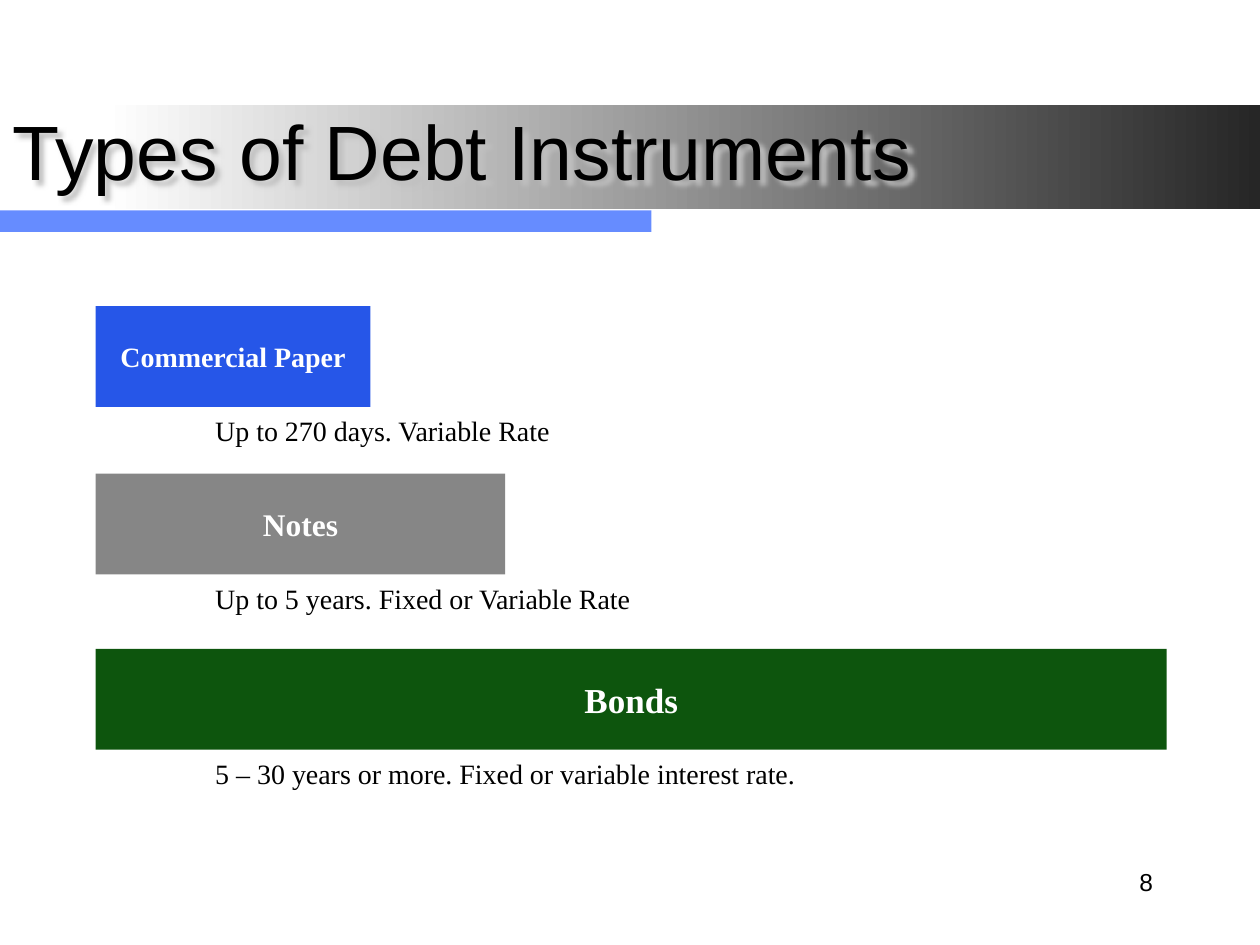
from lxml import etree
from pptx import Presentation
from pptx.dml.color import RGBColor
from pptx.enum import shapes, text
from pptx.oxml.ns import qn
from pptx.util import Inches, Pt

COLORS = {
    "black": "000000", "white": "FFFFFF", "band_end": "262626",
    "accent": "3366FF", "blue": "0039E5", "gray": "868686",
    "green": "004C00", "glow": "C0C0C0",
}
SANS, SERIF = "Arial", "Times New Roman"
LEFT, ALIGN = text.PP_ALIGN.LEFT, text.PP_ALIGN


def rgb(name):
    return RGBColor.from_string(COLORS[name])


def set_text(sp, words, size, font=SERIF, color="black", bold=False,
             align=LEFT, insets=(0.1, 0.05)):
    tf = sp.text_frame
    tf.word_wrap = True
    tf.auto_size = text.MSO_AUTO_SIZE.NONE
    tf.vertical_anchor = text.MSO_ANCHOR.MIDDLE
    tf.margin_left = tf.margin_right = Inches(insets[0])
    tf.margin_top = tf.margin_bottom = Inches(insets[1])
    p = tf.paragraphs[0]
    p.alignment = align
    r = p.add_run()
    r.text = words
    r.font.name, r.font.size, r.font.bold = font, Pt(size), bold
    r.font.color.rgb = rgb(color)


class SlideBuilder:
    def __init__(self, prs):
        self.slide = prs.slides.add_slide(prs.slide_layouts[5])

    def rect(self, box, color, opacity=100):
        sp = self.slide.shapes.add_shape(
            shapes.MSO_SHAPE.RECTANGLE, *map(Inches, box))
        sp.shadow.inherit = False
        sp.line.fill.background()
        sp.fill.solid()
        sp.fill.fore_color.rgb = rgb(color)
        if opacity < 100:
            clr = sp.fill._xPr.find(".//" + qn("a:srgbClr"))
            etree.SubElement(clr, qn("a:alpha"), val=str(opacity * 1000))
        return sp

    def gradient_band(self, box, start, end):
        sp = self.rect(box, start)
        sp.fill.gradient()
        sp.fill.gradient_angle = 0
        for stop, name, position in zip(sp.fill.gradient_stops, (start, end), (0, 1)):
            stop.color.rgb = rgb(name)
            stop.position = position

    def title(self, box, words):
        sp = self.slide.shapes.title
        sp.left, sp.top, sp.width, sp.height = map(Inches, box)
        set_text(sp, words, 44, font=SANS)
        effects = etree.SubElement(sp._element.spPr, qn("a:effectLst"))
        shadow = etree.SubElement(effects, qn("a:outerShdw"), blurRad="38100",
                                  dist="38100", dir="2700000")
        etree.SubElement(shadow, qn("a:srgbClr"), val=COLORS["glow"])

    def label(self, box, words, size, **style):
        sp = self.slide.shapes.add_textbox(*map(Inches, box))
        set_text(sp, words, size, **style)

    def bar(self, box, color, opacity, words, size):
        sp = self.rect(box, color, opacity)
        set_text(sp, words, size, color="white", bold=True,
                 align=ALIGN.CENTER, insets=(0, 0))


def main():
    prs = Presentation()
    prs.slide_width, prs.slide_height = Inches(10), Inches(7.5)
    s = SlideBuilder(prs)

    s.gradient_band((0.83, 0.83, 9.17, 0.83), "white", "band_end")
    s.rect((0, 1.67, 5.17, 0.17), "accent", 75)
    s.title((0, 0.8, 9.25, 0.78), "Types of Debt Instruments")
    # The title follows the band in stacking order
    tree = s.slide.shapes._spTree
    tree.append(s.slide.shapes.title._element)

    instruments = [
        (2.43, 2.18, "blue", 85, "Commercial Paper", 16,
         "Up to 270 days. Variable Rate"),
        (3.76, 3.25, "gray", 100, "Notes", 18,
         "Up to 5 years. Fixed or Variable Rate"),
        (5.15, 8.5, "green", 95, "Bonds", 20,
         "5 – 30 years or more. Fixed or variable interest rate."),
    ]
    bar_height = 0.8
    for top, width, color, opacity, name, size, terms in instruments:
        s.bar((0.76, top, width, bar_height), color, opacity, name, size)
        s.label((1.61, top + bar_height, 6.15, 0.37), terms, 16)

    s.label((7.17, 6.75, 2.08, 0.5), "8", 14, font=SANS, align=ALIGN.RIGHT)
    prs.save("out.pptx")


if __name__ == "__main__":
    main()
